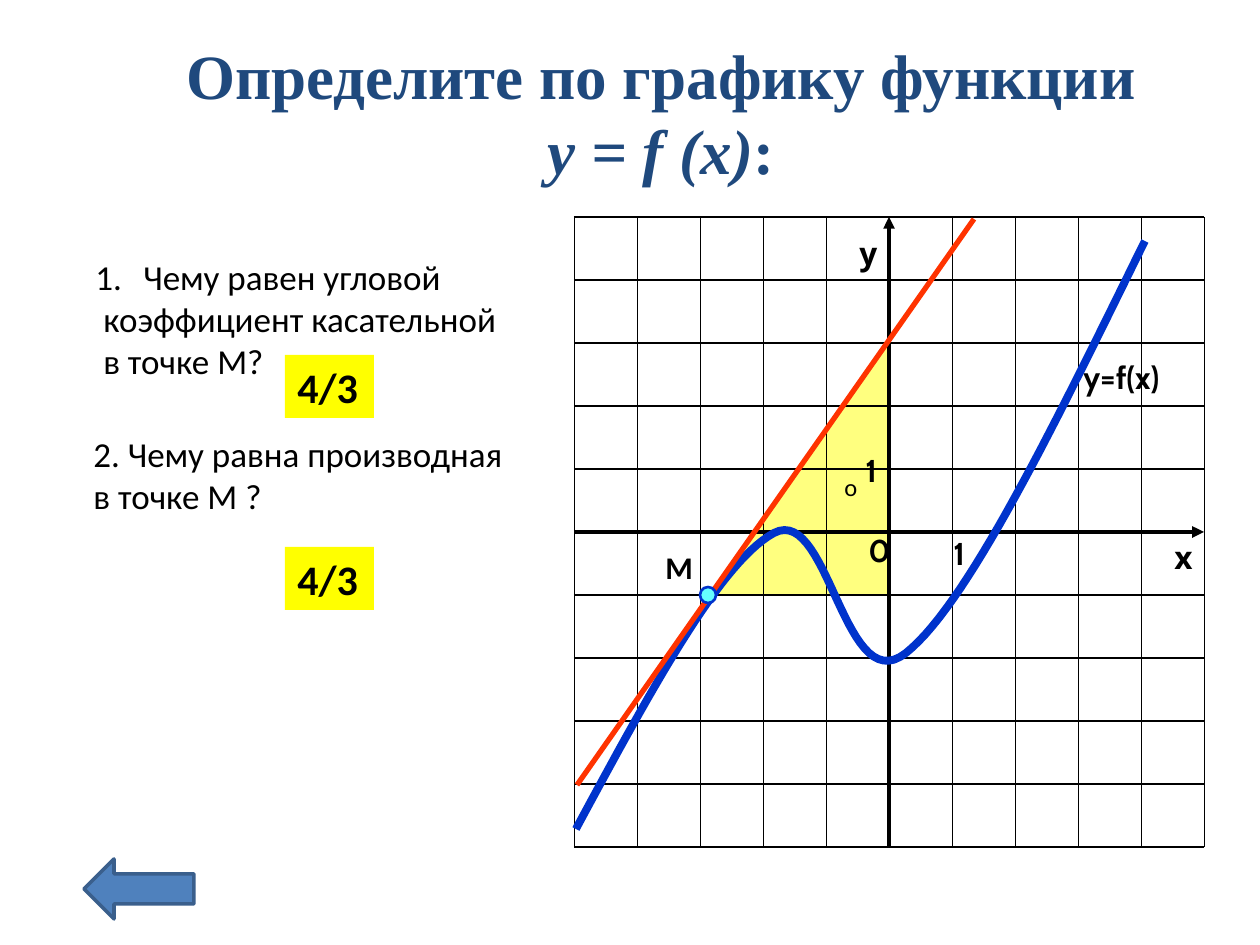
import dataclasses

import lxml.etree
import pptx
import pptx.dml.color
import pptx.enum.shapes
import pptx.enum.text
import pptx.oxml.ns
import pptx.util

RGBColor = pptx.dml.color.RGBColor
SHAPE = pptx.enum.shapes.MSO_SHAPE
qn = pptx.oxml.ns.qn

EMU_PER_PX = 914400 / 126
BLACK = RGBColor(0x00, 0x00, 0x00)
YELLOW = RGBColor(0xFF, 0xFF, 0x00)
CURVE_BLUE = RGBColor(0x00, 0x33, 0xCC)
TANGENT_RED = RGBColor(0xFF, 0x33, 0x00)
POINT_CYAN = RGBColor(0x66, 0xFF, 0xFF)
TITLE_BLUE = RGBColor(0x1F, 0x49, 0x7D)
ARROW_FILL = RGBColor(0x4F, 0x81, 0xBD)
ARROW_LINE = RGBColor(0x3A, 0x5F, 0x8C)

LEFT, TOP, CELL, CELLS = 574, 217, 63, 10
RIGHT, BOTTOM = LEFT + CELL * CELLS, TOP + CELL * CELLS
AXIS = CELLS // 2


@dataclasses.dataclass(frozen=True)
class Box:
    left: int
    top: int
    width: int
    height: int

    def emu(self) -> list[int]:
        return [px(v) for v in dataclasses.astuple(self)]


@dataclasses.dataclass(frozen=True)
class Label:
    lines: tuple[str, ...]
    box: Box
    size: int = 18
    font: str = "Cabin"
    bold: bool = True


LABELS = (
    Label(("у",), Box(847, 228, 44, 50)),
    Label(("х",), Box(1162, 532, 44, 50)),
    Label(("0",), Box(856, 525, 45, 50)),
    Label(("1",), Box(941, 528, 45, 50)),
    Label(("1",), Box(853, 445, 45, 50)),
    Label(("y=f(x)",), Box(1071, 352, 129, 50)),
    Label(("2. Чему равна производная", "в точке М ?"),
          Box(81, 426, 484, 97), 20, "Calibri", False),
    Label(("М",), Box(653, 542, 52, 50), 18, "Calibri"),
)
QUESTION = Label(
    ("Чему равен угловой", " коэффициент касательной", " в точке М?"),
    Box(83, 249, 483, 139), 20, "Calibri", False)
DEGREE = Label(("о",), Box(832, 466, 39, 42), 14, "Calibri", False)
ANSWERS = (Box(285, 355, 89, 63), Box(285, 547, 89, 63))

CURVE_START = (576, 829)
CURVE_SEGMENTS = (
    ((648, 696), (719, 563), (774, 533)),
    ((829, 504), (844, 702), (906, 653)),
    ((968, 604), (1056, 422), (1145, 241)),
)


def px(value: float) -> int:
    return round(value * EMU_PER_PX)


def style_run(r, size: int, font: str, color: RGBColor, bold: bool) -> None:
    r.font.size = pptx.util.Pt(size)
    r.font.name = font
    r.font.color.rgb = color
    r.font.bold = bold


def add_label(s, label: Label):
    sp = s.shapes.add_textbox(*label.box.emu())
    tf = sp.text_frame
    tf.text = "\n".join(label.lines)
    tf.word_wrap = False
    tf.auto_size = pptx.enum.text.MSO_AUTO_SIZE.SHAPE_TO_FIT_TEXT
    for p in tf.paragraphs:
        for r in p.runs:
            style_run(r, label.size, label.font, BLACK, label.bold)
    return sp


def add_question(s) -> None:
    paragraphs = add_label(s, QUESTION).text_frame.paragraphs
    for i, p in enumerate(paragraphs):
        pPr = p._p.get_or_add_pPr()
        pPr.set("marL", str(px(48)))
        pPr.set("indent", str(-px(48)))
        if i == 0:
            lxml.etree.SubElement(pPr, qn("a:buAutoNum"), type="arabicPeriod")


def add_shape(s, kind, box: Box, fill: RGBColor, line: RGBColor | None = None,
              width: float = 0):
    sp = s.shapes.add_shape(kind, *box.emu())
    sp.shadow.inherit = False
    sp.fill.solid()
    sp.fill.fore_color.rgb = fill
    if line is None:
        sp.line.fill.background()
    else:
        sp.line.color.rgb = line
        sp.line.width = pptx.util.Pt(width)
    return sp


def add_line(s, x1: int, y1: int, x2: int, y2: int, width: float,
             color: RGBColor = BLACK, arrow: bool = False) -> None:
    sp = s.shapes.add_connector(pptx.enum.shapes.MSO_CONNECTOR.STRAIGHT,
                                px(x1), px(y1), px(x2), px(y2))
    sp.line.color.rgb = color
    sp.line.width = pptx.util.Pt(width)
    if arrow:
        lxml.etree.SubElement(sp.line._get_or_add_ln(), qn("a:tailEnd"),
                              type="triangle")
    lxml.etree.SubElement(sp._element.spPr, qn("a:effectLst"))


def add_triangle(s) -> None:
    sp = add_shape(s, SHAPE.RIGHT_TRIANGLE, Box(713, 341, 176, 254), YELLOW)
    sp._element.spPr.xfrm.set("flipH", "1")
    color = sp._element.spPr.find(qn("a:solidFill"))[0]
    lxml.etree.SubElement(color, qn("a:alpha"), val="50000")


def add_grid(s) -> None:
    steps = [i for i in range(CELLS + 1) if i != AXIS]
    for i in steps:
        x = LEFT + i * CELL
        add_line(s, x, TOP, x, BOTTOM, 0.25)
    for i in steps:
        y = TOP + i * CELL
        add_line(s, LEFT, y, RIGHT, y, 0.75)
    x, y = LEFT + AXIS * CELL, TOP + AXIS * CELL
    add_line(s, x, BOTTOM, x, TOP, 2.25, arrow=True)
    add_line(s, LEFT, y, RIGHT, y, 2.25, arrow=True)


def bezier(points, t: float) -> tuple[int, int]:
    weights = ((1 - t) ** 3, 3 * t * (1 - t) ** 2, 3 * t * t * (1 - t), t ** 3)
    x, y = (sum(w * v for w, v in zip(weights, axis)) for axis in zip(*points))
    return px(x), px(y)


def add_curve(s, steps: int = 30) -> None:
    start, vertices = CURVE_START, []
    for segment in CURVE_SEGMENTS:
        points = (start, *segment)
        vertices += [bezier(points, i / steps) for i in range(1, steps + 1)]
        start = segment[-1]
    builder = s.shapes.build_freeform(*map(px, CURVE_START))
    builder.add_line_segments(vertices, close=False)
    sp = builder.convert_to_shape()
    sp.shadow.inherit = False
    sp.fill.background()
    sp.line.color.rgb = CURVE_BLUE
    sp.line.width = pptx.util.Pt(4.5)


def add_answer(s, box: Box) -> None:
    tf = add_shape(s, SHAPE.RECTANGLE, box, YELLOW).text_frame
    tf.text = "4/3"
    tf.word_wrap = True
    tf.vertical_anchor = pptx.enum.text.MSO_ANCHOR.TOP
    p = tf.paragraphs[0]
    p.alignment = pptx.enum.text.PP_ALIGN.LEFT
    style_run(p.runs[0], 24, "Calibri", BLACK, True)


def add_title(s) -> None:
    tf = s.shapes.add_textbox(*Box(152, 30, 1018, 164).emu()).text_frame
    tf.word_wrap = True
    p = tf.paragraphs[0]
    p.alignment = pptx.enum.text.PP_ALIGN.CENTER
    for text, italic in (("Определите по графику функции ", False),
                         ("у = f (x)", True), (":", False)):
        r = p.add_run()
        r.text = text
        style_run(r, 36, "Times New Roman", TITLE_BLUE, True)
        r.font.italic = italic


def main() -> None:
    prs = pptx.Presentation()
    prs.slide_width, prs.slide_height = px(1260), px(945)
    s = prs.slides.add_slide(prs.slide_layouts[6])
    add_triangle(s)
    add_label(s, DEGREE)
    add_grid(s)
    for label in LABELS:
        add_label(s, label)
    add_question(s)
    add_curve(s)
    add_line(s, 577, 785, 974, 219, 3, TANGENT_RED)
    add_shape(s, SHAPE.OVAL, Box(700, 587, 16, 16), POINT_CYAN, CURVE_BLUE, 1.5)
    for box in ANSWERS:
        add_answer(s, box)
    add_title(s)
    add_shape(s, SHAPE.LEFT_ARROW, Box(84, 859, 110, 60), ARROW_FILL, ARROW_LINE, 2)
    prs.save("out.pptx")


if __name__ == "__main__":
    main()
